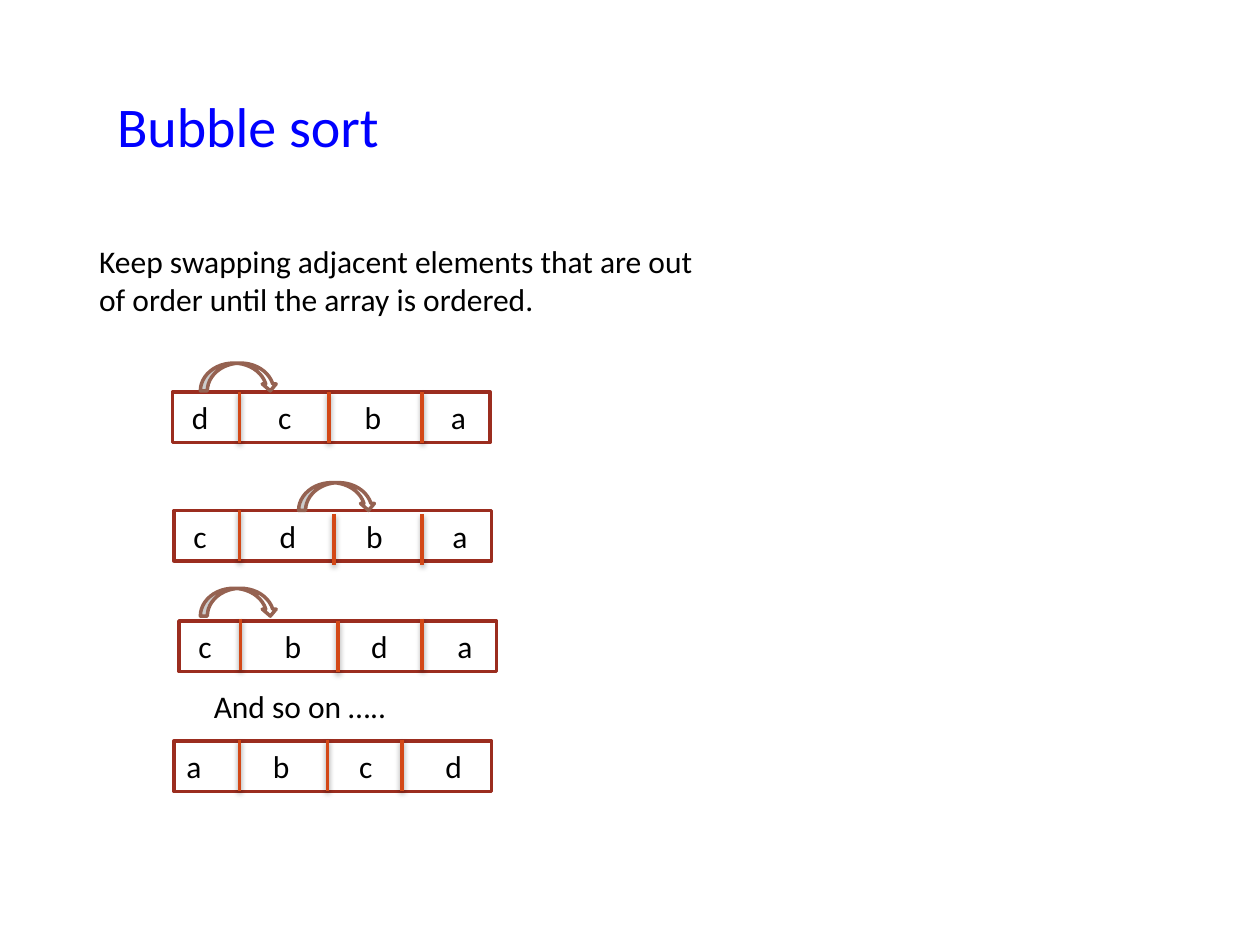
from dataclasses import dataclass
from typing import Optional

from lxml.etree import SubElement
from pptx import Presentation
from pptx.dml.color import RGBColor
from pptx.enum.shapes import MSO_CONNECTOR as Connector, MSO_SHAPE as Preset
from pptx.enum.text import MSO_ANCHOR as Anchor, PP_ALIGN as Align
from pptx.oxml.ns import qn
from pptx.util import Cm, Pt


@dataclass(frozen=True)
class Theme:
    font: str = "Calibri"
    title_size: int = 32
    body_size: int = 18
    line_width: int = 2
    title: str = "0000FF"
    text: str = "000000"
    paper: str = "FFFFFF"
    box: str = "9B2D1F"
    divider: str = "D34817"
    arrow: str = "956251"
    shadow: str = "000000"


@dataclass(frozen=True)
class Point:
    x: float
    y: float


@dataclass(frozen=True)
class ArrayState:
    """One array; divider tops are given relative to the box, all in cm."""
    corner: Point
    values: str
    dividers: tuple[Point, ...]
    swap: Optional[Point] = None
    indent: float = 0.39


THEME = Theme()
BOX_WIDTH, BOX_HEIGHT = 6.4, 1.02
DIVIDER_HEIGHT = 1.03
SWAP_WIDTH, SWAP_HEIGHT = 1.55, 0.56
VALUE_STEP = 1.74

STATES = (
    ArrayState(Point(3.48, 7.9), "dcba",
               (Point(4.83, 0), Point(6.63, 0), Point(8.51, 0)), Point(4.04, 7.32)),
    ArrayState(Point(3.51, 10.29), "cdba",
               (Point(4.83, 0), Point(6.73, 0.07), Point(8.51, 0.07)), Point(6.02, 9.73)),
    ArrayState(Point(3.61, 12.52), "cbda",
               (Point(4.85, -0.05), Point(6.81, 0), Point(8.51, -0.05)), Point(4.04, 11.86)),
    ArrayState(Point(3.51, 14.94), "abcd",
               (Point(4.83, -0.03), Point(6.6, -0.03), Point(8.1, -0.03)), indent=0.25),
)


def rgb(value: str) -> RGBColor:
    return RGBColor.from_string(value)


def write(shape, text: str, *, size: int = THEME.body_size, color: str = THEME.text,
          anchor: Anchor = Anchor.TOP, indent: float = 0.25, tab_step: float = 0) -> None:
    """Fill a shape with one left-aligned paragraph, with a tab stop for each tab."""
    frame = shape.text_frame
    frame.word_wrap = True
    frame.vertical_anchor = anchor
    frame.margin_left = Cm(indent)
    paragraph = frame.paragraphs[0]
    paragraph.alignment = Align.LEFT
    run = paragraph.add_run()
    run.text = text
    run.font.name = THEME.font
    run.font.size = Pt(size)
    run.font.color.rgb = rgb(color)
    if tab_step:
        tabs = SubElement(paragraph._p.get_or_add_pPr(), qn("a:tabLst"))
        for number in range(1, text.count("\t") + 1):
            SubElement(tabs, qn("a:tab"), pos=str(Cm(number * tab_step)), algn="l")


def add_text(slide, corner: Point, width: float, height: float, text: str, **style) -> None:
    area = slide.shapes.add_textbox(Cm(corner.x), Cm(corner.y), Cm(width), Cm(height))
    write(area, text, **style)


def add_outlined(slide, preset: Preset, corner: Point, width: float, height: float, color: str):
    shape = slide.shapes.add_shape(preset, Cm(corner.x), Cm(corner.y), Cm(width), Cm(height))
    shape.shadow.inherit = False
    shape.fill.solid()
    shape.fill.fore_color.rgb = rgb(THEME.paper)
    shape.line.color.rgb = rgb(color)
    shape.line.width = Pt(THEME.line_width)
    return shape


def add_divider(slide, top: Point) -> None:
    """Draw a vertical line with a soft shadow below it."""
    divider = slide.shapes.add_connector(
        Connector.STRAIGHT, Cm(top.x), Cm(top.y), Cm(top.x), Cm(top.y + DIVIDER_HEIGHT))
    divider.line.color.rgb = rgb(THEME.divider)
    divider.line.width = Pt(THEME.line_width)
    effects = SubElement(divider._element.spPr, qn("a:effectLst"))
    shadow = SubElement(effects, qn("a:outerShdw"), blurRad=str(Pt(3.1)), dist=str(Pt(1.6)),
                        dir="5400000", rotWithShape="0")
    tint = SubElement(shadow, qn("a:srgbClr"), val=THEME.shadow)
    SubElement(tint, qn("a:alpha"), val="38000")


def add_state(slide, state: ArrayState) -> None:
    box = add_outlined(slide, Preset.RECTANGLE, state.corner, BOX_WIDTH, BOX_HEIGHT, THEME.box)
    write(box, "\t".join(state.values), indent=state.indent, tab_step=VALUE_STEP)
    if state.swap:
        add_outlined(slide, Preset.CURVED_DOWN_ARROW, state.swap,
                     SWAP_WIDTH, SWAP_HEIGHT, THEME.arrow)
    for divider in state.dividers:
        add_divider(slide, Point(divider.x, state.corner.y + divider.y))


def main() -> None:
    deck = Presentation()
    deck.slide_width, deck.slide_height = Cm(25.4), Cm(19.05)
    slide = deck.slides.add_slide(deck.slide_layouts[6])
    add_text(slide, Point(2.11, 0.94), 22.86, 3.18, "Bubble sort",
             size=THEME.title_size, color=THEME.title, anchor=Anchor.MIDDLE)
    add_text(slide, Point(1.75, 4.75), 12.7, 1.8,
             "Keep swapping adjacent elements that are out of order until the array is ordered.")
    for state in STATES:
        add_state(slide, state)
    add_text(slide, Point(4.06, 13.72), 4.85, 1.02, "And so on …..")
    deck.save("out.pptx")


if __name__ == "__main__":
    main()
